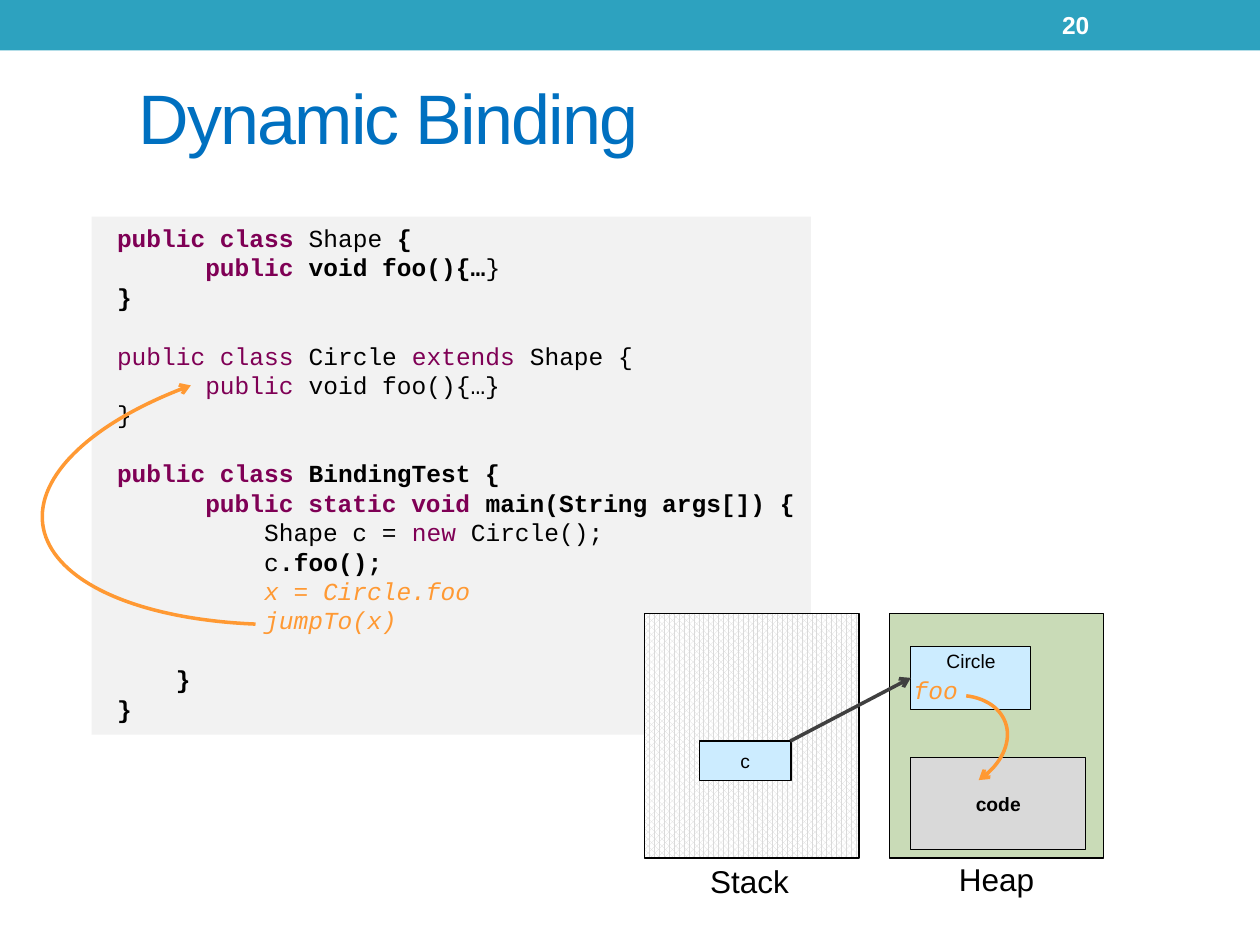
from dataclasses import dataclass
from typing import Any

from lxml import etree
from pptx import Presentation
from pptx.dml.color import RGBColor
from pptx.enum.dml import MSO_PATTERN
from pptx.enum.shapes import MSO_CONNECTOR, MSO_SHAPE
from pptx.enum.text import MSO_ANCHOR, PP_ALIGN
from pptx.oxml.ns import qn
from pptx.util import Cm, Pt

RECT, ARC = MSO_SHAPE.RECTANGLE, MSO_SHAPE.ARC
LINE = MSO_CONNECTOR.STRAIGHT
DOTS = MSO_PATTERN.PERCENT_75
TOP, MID = MSO_ANCHOR.TOP, MSO_ANCHOR.MIDDLE
LEFT, MIDST, RIGHT = PP_ALIGN.LEFT, PP_ALIGN.CENTER, PP_ALIGN.RIGHT
BLACK, WHITE, BLUE, ORANGE, PLUM = "000000", "FFFFFF", "CCECFF", "FF9933", "7F0055"
PITCH = 16.8

KEY, KEYB = (PLUM, False, False), (PLUM, True, False)
TXT, BOLD = (BLACK, False, False), (BLACK, True, False)
NOTE = (ORANGE, False, True)

CODE = [
    [("public class ", KEYB), ("Shape", TXT), (" {", BOLD)],
    [("      public", KEYB), (" void foo(){…", BOLD), ("}", TXT)],
    [("}", BOLD)],
    [],
    [("public class", KEY), (" Circle ", TXT), ("extends", KEY), (" Shape {", TXT)],
    [("      public", KEY), (" void foo(){…}", TXT)],
    [("}", TXT)],
    [],
    [("public class ", KEYB), ("BindingTest {", BOLD)],
    [("      public static void", KEYB), (" main(String args[]) {", BOLD)],
    [("          Shape c = ", TXT), ("new", KEY), (" Circle();", TXT)],
    [("          c", TXT), (".foo();", BOLD)],
    [("          x = Circle.foo", NOTE)],
    [("          jumpTo(x)", NOTE)],
    [],
    [("    }", BOLD)],
    [("}", BOLD)],
]


def rgb(code):
    return RGBColor.from_string(code)


@dataclass
class Deck:
    """Style and current slide, with a method for each kind of element."""

    slide: Any
    sans: str = "Arial"
    mono: str = "Courier New"
    edge: float = 0.75
    bold: float = 2

    def shape(self, kind, box):
        item = self.slide.shapes.add_shape(kind, *map(Cm, box))
        item.shadow.inherit = False
        return item

    def rect(self, box, fill, line=True):
        item = self.shape(RECT, box)
        item.fill.solid()
        item.fill.fore_color.rgb = rgb(fill)
        if line:
            item.line.color.rgb = rgb(BLACK)
            item.line.width = Pt(self.edge)
        else:
            item.line.fill.background()
        return item

    def dots(self, box, fore, back):
        item = self.rect(box, back)
        item.fill.patterned()
        item.fill.pattern = DOTS
        item.fill.fore_color.rgb = rgb(fore)
        item.fill.back_color.rgb = rgb(back)

    def stroke(self, item, color):
        item.line.color.rgb = rgb(color)
        item.line.width = Pt(self.bold)
        edge = item._element.spPr.find(qn("a:ln"))
        etree.SubElement(edge, qn("a:tailEnd"), type="arrow")

    def arc(self, box, turn, start, end):
        item = self.shape(ARC, box)
        item.rotation = turn
        item.adjustments[0], item.adjustments[1] = start, end
        item.fill.background()
        self.stroke(item, ORANGE)

    def arrow(self, x, y, goal, color):
        item = self.slide.shapes.add_connector(LINE, Cm(x), Cm(y), goal.left, goal.top)
        item.end_connect(goal, 1)
        self.stroke(item, color)
        etree.SubElement(item._element.spPr, qn("a:effectLst"))

    def run(self, para, text, look, size, font):
        item = para.add_run()
        item.text = text
        face = item.font
        face.name, face.size = font, Pt(size)
        color, face.bold, face.italic = look
        face.color.rgb = rgb(color)
        return item

    def text(self, item, words, size, look=TXT, align=MIDST, anchor=MID, font=None):
        frame = item.text_frame
        frame.word_wrap = True
        frame.vertical_anchor = anchor
        para = frame.paragraphs[0]
        para.alignment = align
        return self.run(para, words, look, size, font or self.sans)

    def label(self, box, *args, **style):
        return self.text(self.slide.shapes.add_textbox(*map(Cm, box)), *args, **style)

    def code(self, box, lines, size):
        frame = self.slide.shapes.add_textbox(*map(Cm, box)).text_frame
        frame.word_wrap = True
        for i, line in enumerate(lines):
            if not line:
                continue
            para = frame.add_paragraph() if i else frame.paragraphs[0]
            para.line_spacing = Pt(PITCH)
            if i and not lines[i - 1]:
                para.space_before = Pt(PITCH)
            for words, look in line:
                self.run(para, words, look, size, self.mono)


def main():
    prs = Presentation()
    prs.slide_width, prs.slide_height = Cm(25.4), Cm(19.05)
    deck = Deck(prs.slides.add_slide(prs.slide_layouts[6]))

    deck.rect((0, 0, 25.4, 1.02), "2DA2BF", False)
    deck.rect((1.85, 4.37, 14.5, 10.44), "F2F2F2", False)
    deck.rect((17.93, 12.37, 4.32, 4.93), "C9DBB7")
    deck.dots((13, 12.37, 4.32, 4.93), "DADADA", WHITE)
    circle = deck.rect((18.36, 13.03, 2.41, 1.27), BLUE)
    deck.label((12.95, 17.25, 4.32, 1.02), "Stack", 18, anchor=TOP)
    deck.text(deck.rect((14.1, 14.94, 1.85, 0.79), BLUE), "c", 11)
    deck.arrow(15.93, 14.94, circle, "404040")

    title = deck.label((2.54, 0.76, 21.59, 3.18), "Dynamic Binding", 40,
                       ("0070C0", False, False), LEFT)
    title.font._element.set("spc", "-100")
    deck.label((21.16, 0.05, 2.97, 0.91), "20", 14, (WHITE, True, False), LEFT)
    deck.code((2.11, 4.37, 16.87, 10.44), CODE, 14)

    deck.text(deck.rect((18.36, 15.27, 3.53, 1.85), "D9D9D9"), "code", 11, BOLD)
    deck.arc((17.73, 14.07, 2.62, 1.9), 339.3, 188.75, 39.8)
    deck.arc((0.81, 7.06, 12.52, 5.44), 172.8, 186.99, 23.49)
    deck.label((17.88, 13.49, 1.68, 0.86), "foo", 14, NOTE, RIGHT, TOP, deck.mono)
    deck.label((17.96, 12.95, 3.23, 0.74), "Circle", 11)
    deck.label((17.93, 17.22, 4.32, 1.02), "Heap", 18, anchor=TOP)
    prs.save("out.pptx")


if __name__ == "__main__":
    main()
